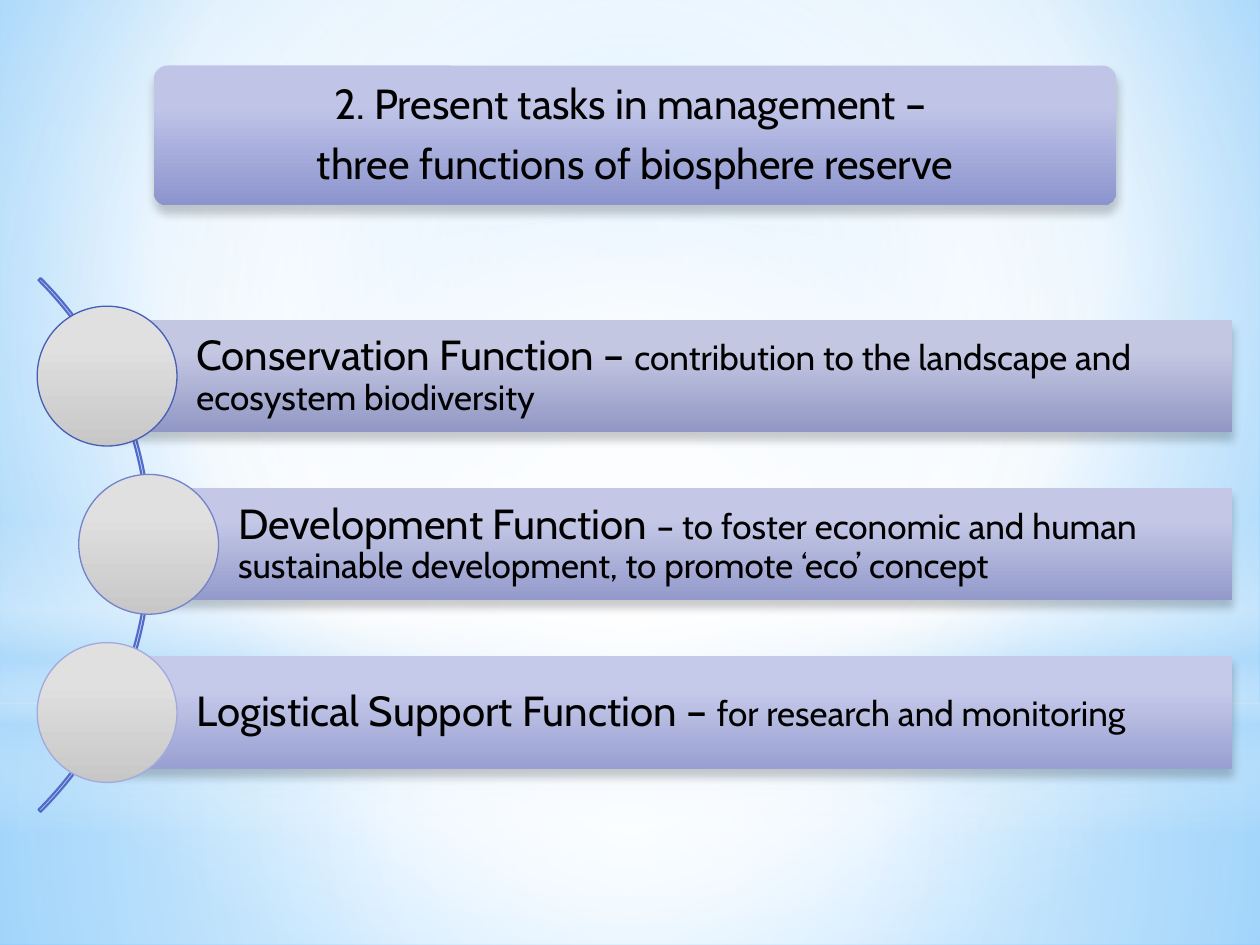
"""Build the slide on the three functions of a biosphere reserve."""
from lxml.etree import SubElement
from pptx import Presentation
from pptx.dml.color import RGBColor
from pptx.enum.shapes import MSO_SHAPE as Shape
from pptx.enum.text import MSO_ANCHOR as Anchor, MSO_AUTO_SIZE as Fit, PP_ALIGN as Align
from pptx.oxml.ns import qn
from pptx.util import Inches, Pt

color = RGBColor.from_string


def shade(fill, stops, focus=None):
    """Fill with (position, colour, opacity) stops, downward or around a focus."""
    fill.gradient()
    grad = fill._xPr.find(qn("a:gradFill"))
    for child in list(grad):
        grad.remove(child)
    row = SubElement(grad, qn("a:gsLst"))
    for pos, tone, alpha in stops:
        stop = SubElement(row, qn("a:gs"), pos=str(pos * 1000))
        clr = SubElement(stop, qn("a:srgbClr"), val=tone)
        if alpha < 100:
            SubElement(clr, qn("a:alpha"), val=str(alpha * 1000))
    if focus:
        way = SubElement(grad, qn("a:path"), path="circle")
        sides = {side: str(num * 1000) for side, num in zip("ltrb", focus)}
        SubElement(way, qn("a:fillToRect"), **sides)
    else:
        SubElement(grad, qn("a:lin"), ang="5400000", scaled="0")


def draw(kind, box, stops=None, focus=None, line=None, width=0.75, drop=False):
    """Add a shape with its gradient, outline and optional drop shadow."""
    shape = slide.shapes.add_shape(kind, *map(Inches, box))
    shape.shadow.inherit = False
    if stops:
        shade(shape.fill, stops, focus)
    else:
        shape.fill.background()
    if line:
        shape.line.color.rgb = color(line)
        shape.line.width = Pt(width)
    else:
        shape.line.fill.background()
    if drop:
        effects = shape._element.spPr.find(qn("a:effectLst"))
        cast = SubElement(effects, qn("a:outerShdw"), blurRad=str(Pt(5)), dist=str(Pt(4)),
                          dir="5400000", rotWithShape="0")
        SubElement(SubElement(cast, qn("a:srgbClr"), val="000000"), qn("a:alpha"), val="20000")
    return shape


deck = Presentation()
deck.slide_width, deck.slide_height = Inches(10), Inches(7.5)
slide = deck.slides.add_slide(deck.slide_layouts[5])
white, sky, mid = "FFFFFF", "B4DCFA", (50, 50, 50, 50)

shade(slide.background.fill, [(0, "9ED5FF", 78), (60, white, 100), (100, "5BB9FF", 100)],
      (20, 10, 20, 60))
draw(Shape.RECTANGLE, (0, 5.58, 10, 1.92), [(0, white, 91), (37, white, 76), (100, sky, 79)], mid)
draw(Shape.RECTANGLE, (0, 0, 10, 5.58), [(0, white, 89), (48, white, 62), (100, sky, 79)], mid)
draw(Shape.RECTANGLE, (0, 4.12, 10, 2.5),
     [(0, white, 0), (29, white, 30), (45, sky, 40), (55, white, 26), (65, sky, 60), (100, white, 0)])
draw(Shape.OVAL, (0, 1.75, 10, 5.58), [(0, white, 100), (56, white, 0)], mid)

arc = draw(Shape.BLOCK_ARC, (-4.79, 1.33, 5.99, 5.99), line="536AC9", width=1.25)
for num, value in enumerate((189, 27, 0.004)):
    arc.adjustments[num] = value

tasks = [
    (0.85, "C4C7E2", "9197C4", "475DB6", "Conservation Function – ",
     "contribution to the landscape and ecosystem biodiversity"),
    (1.18, "C4C8E6", "939ACB", "7482C9", "Development Function ",
     "– to foster economic and human sustainable development, to promote ‘eco’ concept"),
    (0.85, "C6CAEA", "99A0D2", "A2AADB", "Logistical Support Function – ",
     "for research and monitoring"),
]
right, first, pitch, tall, size = 9.78, 2.54, 1.335, 0.89, 1.11
for num, (left, light, dark, rim, name, note) in enumerate(tasks):
    top = first + num * pitch
    bar = draw(Shape.RECTANGLE, (left, top, right - left, tall),
               [(28, light, 100), (100, dark, 100)], drop=True)
    frame = bar.text_frame
    frame.word_wrap, frame.vertical_anchor = True, Anchor.MIDDLE
    frame.margin_left = Inches(0.71)
    frame.margin_top = frame.margin_right = frame.margin_bottom = Inches(0.07)
    para = frame.paragraphs[0]
    para.alignment, para.line_spacing = Align.LEFT, 0.9
    para.font.name, para.font.color.rgb = "Cabin", color("000000")
    for text, points in ((name, 24), (note, 20)):
        run = para.add_run()
        run.text, run.font.size = text, Pt(points)
    draw(Shape.OVAL, (left - size / 2, top - (size - tall) / 2, size, size),
         [(28, "E0E0E0", 100), (100, "C7C7C7", 100)], line=rim)

card = draw(Shape.ROUNDED_RECTANGLE, (1.22, 0.52, 7.64, 1.11),
            [(28, "C0C5E8", 100), (100, "8C94CE", 100)], drop=True)
card.adjustments[0] = 0.1

title = slide.shapes.title
card._element.addnext(title._element)
title.left, title.top, title.width, title.height = map(Inches, (1.27, 0.55, 7.54, 1.05))
frame = title.text_frame
frame.text = "2. Present tasks in management – \nthree functions of biosphere reserve"
frame.auto_size, frame.word_wrap, frame.vertical_anchor = Fit.NONE, True, Anchor.MIDDLE
frame.margin_left = frame.margin_top = frame.margin_right = frame.margin_bottom = Inches(0.09)
for para in frame.paragraphs:
    para.alignment, para.line_spacing, para.space_after = Align.CENTER, 0.9, Pt(8.4)
    para.font.name, para.font.size, para.font.color.rgb = "Cabin", Pt(24), color("000000")

deck.save("out.pptx")
